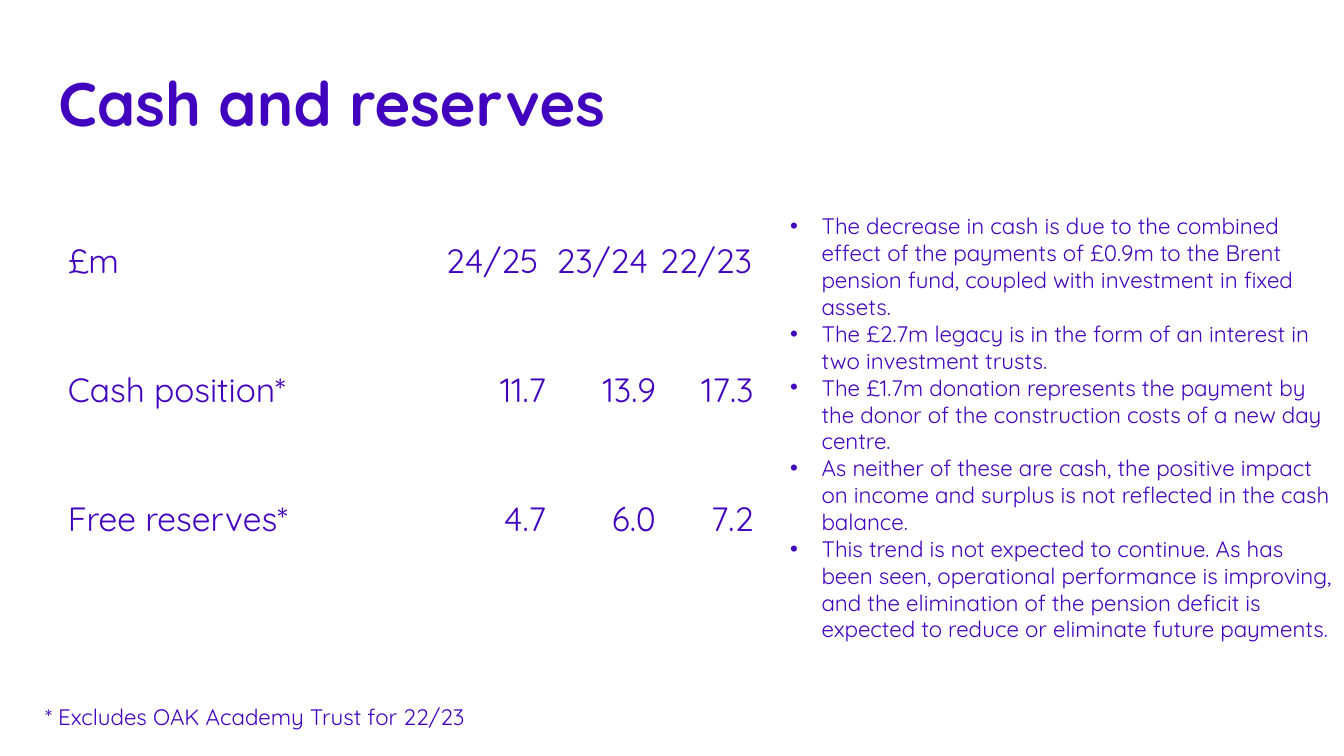
from lxml.etree import SubElement
from pptx import Presentation
from pptx.dml.color import RGBColor
from pptx.enum.text import MSO_ANCHOR, MSO_AUTO_SIZE, PP_ALIGN
from pptx.oxml.ns import qn
from pptx.util import Cm, Pt

PURPLE = RGBColor(0x42, 0x03, 0xBF)
FONT = "Quicksand"

COLUMN_WIDTHS = [5.43, 3.91, 2.77, 2.77, 2.46]
ROW_HEIGHTS = [1.09, 1.09, 2.16, 1.09, 2.16, 0.86, 0.86]
HEADER = ["£m", "", "24/25", "23/24", "22/23"]
FIGURES = {
    2: ["Cash position*", "", "11.7", "13.9", "17.3"],
    4: ["Free reserves*", "", "4.7", "6.0", "7.2"],
}
COMMENTS = [
    "The decrease in cash is due to the combined effect of the payments of £0.9m "
    "to the Brent pension fund, coupled with investment in fixed assets.",
    "The £2.7m legacy is in the form of an interest in two investment trusts.",
    "The £1.7m donation represents the payment by the donor of the construction "
    "costs of a new day centre.",
    "As neither of these are cash, the positive impact on income and surplus is "
    "not reflected in the cash balance.",
    "This trend is not expected to continue. As has been seen, operational "
    "performance is improving, and the elimination of the pension deficit is "
    "expected to reduce or eliminate future payments.",
]


def place(sp, left, top, width, height):
    sp.left, sp.top, sp.width, sp.height = Cm(left), Cm(top), Cm(width), Cm(height)


def add_run(p, text, size, bold=False):
    r = p.add_run()
    r.text = text
    r.font.name, r.font.size, r.font.bold = FONT, Pt(size), bold
    r.font.color.rgb = PURPLE


def add_title(s, text):
    sp = s.shapes.title
    place(sp, 1.22, 1.7, 18.21, 1.98)
    tf = sp.text_frame
    tf.auto_size = MSO_AUTO_SIZE.NONE
    tf.vertical_anchor = MSO_ANCHOR.MIDDLE
    p = tf.paragraphs[0]
    p.alignment, p.line_spacing = PP_ALIGN.LEFT, 0.9
    add_run(p, text, 44, bold=True)


def add_bullets(s, items):
    sp = s.placeholders[1]
    place(sp, 19.66, 5.23, 14.22, 11.89)
    tf = sp.text_frame
    tf.auto_size = MSO_AUTO_SIZE.NONE
    tf.vertical_anchor = MSO_ANCHOR.TOP
    for i, text in enumerate(items):
        p = tf.add_paragraph() if i else tf.paragraphs[0]
        pPr = p._p.get_or_add_pPr()
        pPr.set("marL", str(Cm(0.79)))
        pPr.set("indent", str(-Cm(0.79)))
        SubElement(pPr, qn("a:buFont"), typeface="Arial")
        SubElement(pPr, qn("a:buChar"), char="•")
        p.space_before = Pt(0)
        add_run(p, text, 16)


def fill_row(table, row, texts, figure_alignment):
    for col, text in enumerate(texts):
        if text:
            p = table.cell(row, col).text_frame.paragraphs[0]
            p.alignment = figure_alignment if col else PP_ALIGN.LEFT
            add_run(p, text, 24)


def add_reserves_table(s):
    frame = s.shapes.add_table(len(ROW_HEIGHTS), len(COLUMN_WIDTHS), Cm(1.68), Cm(6.02),
                               Cm(sum(COLUMN_WIDTHS)), Cm(sum(ROW_HEIGHTS)))
    table = frame.table
    table.first_row = table.horz_banding = False
    for column, width in zip(table.columns, COLUMN_WIDTHS):
        column.width = Cm(width)
    for row, height in zip(table.rows, ROW_HEIGHTS):
        row.height = Cm(height)

    # Plain cells without fill or borders
    for cell in table.iter_cells():
        cell.fill.background()
        cell.vertical_anchor = MSO_ANCHOR.BOTTOM
        cell.margin_left = cell.margin_right = cell.margin_top = Cm(0.03)
        cell.margin_bottom = 0
        tcPr = cell._tc.get_or_add_tcPr()
        for i, side in enumerate(("lnL", "lnR", "lnT", "lnB")):
            ln = tcPr.makeelement(qn(f"a:{side}"), {"w": "0"})
            SubElement(ln, qn("a:noFill"))
            tcPr.insert(i, ln)

    # Labels span two columns below the header
    for row in (2, 4, 6):
        table.cell(row, 0).merge(table.cell(row, 1))
    fill_row(table, 0, HEADER, PP_ALIGN.CENTER)
    for row, texts in FIGURES.items():
        fill_row(table, row, texts, PP_ALIGN.RIGHT)


def add_footnote(s, text):
    sp = s.shapes.add_textbox(Cm(0.89), Cm(17.6), Cm(21.21), Cm(0.94))
    tf = sp.text_frame
    tf.word_wrap = True
    add_run(tf.paragraphs[0], text, 16)


def main():
    prs = Presentation()
    prs.slide_width, prs.slide_height = Cm(33.87), Cm(19.05)
    s = prs.slides.add_slide(prs.slide_layouts[1])
    add_title(s, "Cash and reserves")
    add_reserves_table(s)
    add_footnote(s, "* Excludes OAK Academy Trust for 22/23")
    add_bullets(s, COMMENTS)
    prs.save("out.pptx")


if __name__ == "__main__":
    main()
